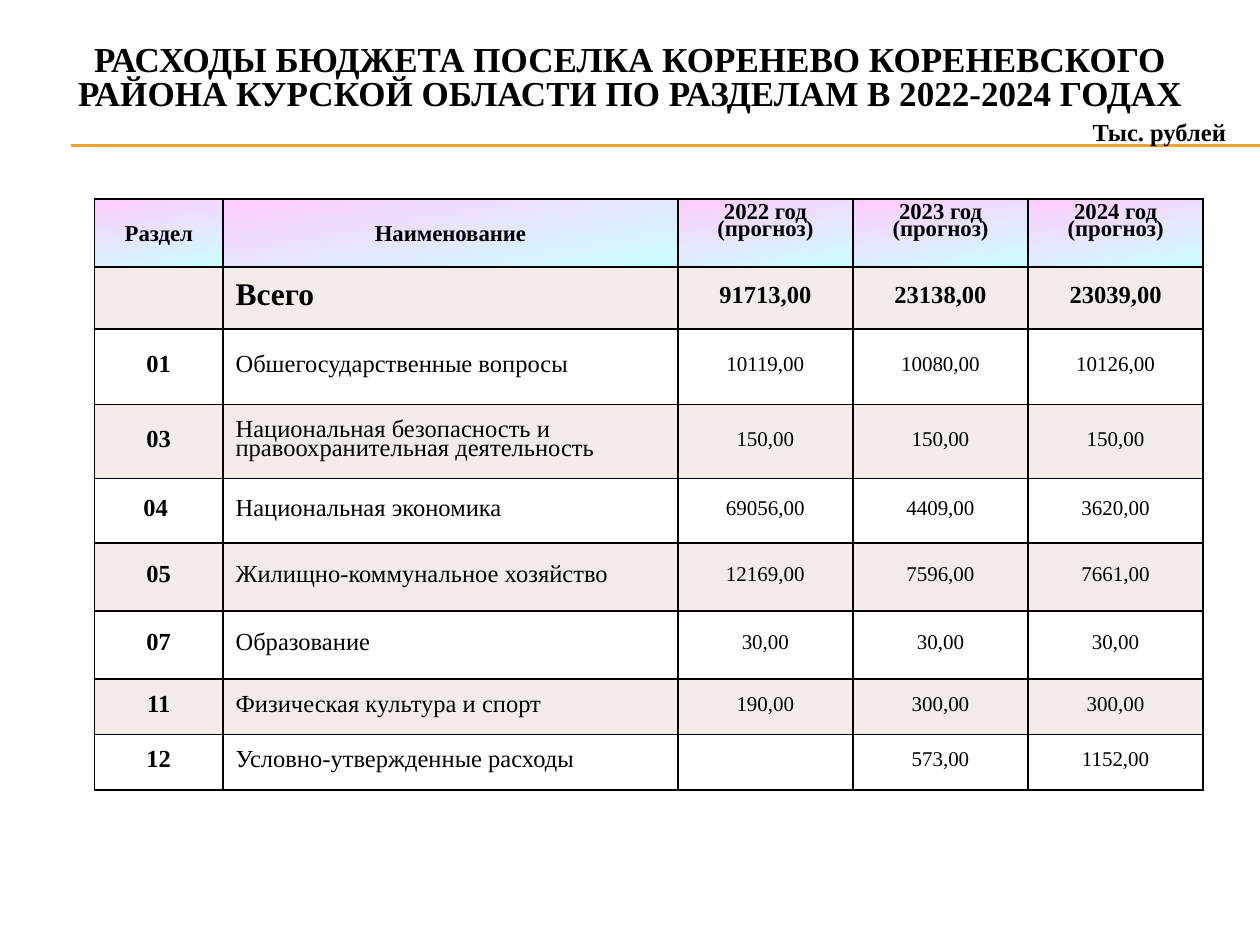
from lxml.etree import SubElement
from pptx import Presentation
from pptx.dml.color import RGBColor
from pptx.enum.shapes import MSO_CONNECTOR
from pptx.enum.text import MSO_ANCHOR, MSO_AUTO_SIZE, PP_ALIGN
from pptx.oxml.ns import qn
from pptx.util import Inches, Pt

BLACK = "000000"
GOLD = "F0A22E"
BAND_FILLS = ("F4ECE8", "FFFFFF")
HEADER_GRADIENT = ("FFCCFF", "CCFFFF")
COLUMN_WIDTHS = (1.02, 3.61, 1.39, 1.39, 1.39)
ROW_HEIGHTS = (0.54, 0.49, 0.6, 0.59, 0.51, 0.54, 0.54, 0.44, 0.44)
HEADERS = ("Раздел", "Наименование", "2022 год (прогноз)",
           "2023 год (прогноз)", "2024 год (прогноз)")
EXPENSES = (
    ("", "Всего", "91713,00", "23138,00", "23039,00"),
    ("01", "Обшегосударственные вопросы", "10119,00", "10080,00", "10126,00"),
    ("03", "Национальная безопасность и правоохранительная деятельность",
     "150,00", "150,00", "150,00"),
    ("04 ", "Национальная экономика", "69056,00", "4409,00", "3620,00"),
    ("05", "Жилищно-коммунальное хозяйство", "12169,00", "7596,00", "7661,00"),
    ("07", "Образование", "30,00", "30,00", "30,00"),
    ("11", "Физическая культура и спорт", "190,00", "300,00", "300,00"),
    ("12", "Условно-утвержденные расходы", "", "573,00", "1152,00"),
)


def color(value):
    return RGBColor.from_string(value)


def write(frame, text, size, bold=True, align=PP_ALIGN.CENTER, spacing=1.0):
    frame.text = text
    paragraph = frame.paragraphs[0]
    paragraph.alignment = align
    paragraph.line_spacing = spacing
    font = paragraph.font
    font.name = "Times New Roman"
    font.size = Pt(size)
    font.bold = bold
    font.color.rgb = color(BLACK)


def place(shape, left, top, width, height):
    shape.left, shape.top = Inches(left), Inches(top)
    shape.width, shape.height = Inches(width), Inches(height)


def add_title(slide, text):
    title = slide.shapes.title
    place(title, 0.5, 0.17, 9, 0.92)
    frame = title.text_frame
    frame.word_wrap = True
    frame.auto_size = MSO_AUTO_SIZE.NONE
    frame.vertical_anchor = MSO_ANCHOR.MIDDLE
    write(frame, text, 20, spacing=0.8)


def add_rule(slide, top):
    rule = slide.shapes.add_connector(
        MSO_CONNECTOR.STRAIGHT, Inches(0.56), Inches(top), Inches(10), Inches(top))
    rule.line.color.rgb = color(GOLD)
    rule.line.width = Pt(0.75)
    SubElement(rule._element.spPr, qn("a:effectLst"))


def add_unit(slide, text):
    unit = slide.shapes.add_textbox(
        Inches(8.33), Inches(0.88), Inches(1.58), Inches(0.34))
    frame = unit.text_frame
    frame.word_wrap = True
    frame.margin_right = Inches(0.18)
    write(frame, text, 14, align=PP_ALIGN.RIGHT)


def add_borders(cell):
    properties = cell._tc.get_or_add_tcPr()
    for position, side in enumerate(("lnL", "lnR", "lnT", "lnB")):
        border = SubElement(properties, qn(f"a:{side}"), w=str(Pt(1)))
        fill = SubElement(border, qn("a:solidFill"))
        SubElement(fill, qn("a:srgbClr"), val=BLACK)
        properties.insert(position, border)


def format_header(cell, text, column):
    cell.fill.gradient()
    cell.fill.gradient_angle = 280
    for stop, value in zip(cell.fill.gradient_stops, HEADER_GRADIENT):
        stop.color.rgb = color(value)
    if column < 2:
        cell.vertical_anchor = MSO_ANCHOR.MIDDLE
        cell.margin_top = Inches(0.1)
    write(cell.text_frame, text, 13, spacing=0.7)


def format_expense(cell, text, row, column):
    cell.fill.solid()
    cell.fill.fore_color.rgb = color(BAND_FILLS[row % 2])
    cell.vertical_anchor = MSO_ANCHOR.MIDDLE
    is_total = row == 0
    is_name = column == 1
    if is_total and is_name:
        size = 18
    elif is_total or column < 2:
        size = 14
    else:
        size = 12
    align = PP_ALIGN.LEFT if is_name else PP_ALIGN.CENTER
    write(cell.text_frame, text, size, is_total or column == 0, align, 0.7)


def add_budget_table(slide):
    budget = slide.shapes.add_table(
        len(ROW_HEIGHTS), len(COLUMN_WIDTHS), Inches(0.75), Inches(1.58),
        Inches(sum(COLUMN_WIDTHS)), Inches(sum(ROW_HEIGHTS))).table
    budget.first_row = budget.horz_banding = False
    for column, width in zip(budget.columns, COLUMN_WIDTHS):
        column.width = Inches(width)
    for row, height in zip(budget.rows, ROW_HEIGHTS):
        row.height = Inches(height)
    for column, header in enumerate(HEADERS):
        format_header(budget.cell(0, column), header, column)
    for row, expense in enumerate(EXPENSES):
        for column, text in enumerate(expense):
            format_expense(budget.cell(row + 1, column), text, row, column)
    for cell in budget.iter_cells():
        add_borders(cell)


def main():
    presentation = Presentation()
    presentation.slide_width = Inches(10)
    presentation.slide_height = Inches(7.5)
    slide = presentation.slides.add_slide(presentation.slide_layouts[5])
    for top in (1.15, 1.16):
        add_rule(slide, top)
    add_title(slide, "РАСХОДЫ БЮДЖЕТА ПОСЕЛКА КОРЕНЕВО КОРЕНЕВСКОГО "
                     "РАЙОНА КУРСКОЙ ОБЛАСТИ ПО РАЗДЕЛАМ В 2022-2024 ГОДАХ")
    add_budget_table(slide)
    add_unit(slide, "Тыс. рублей")
    presentation.save("out.pptx")


if __name__ == "__main__":
    main()
